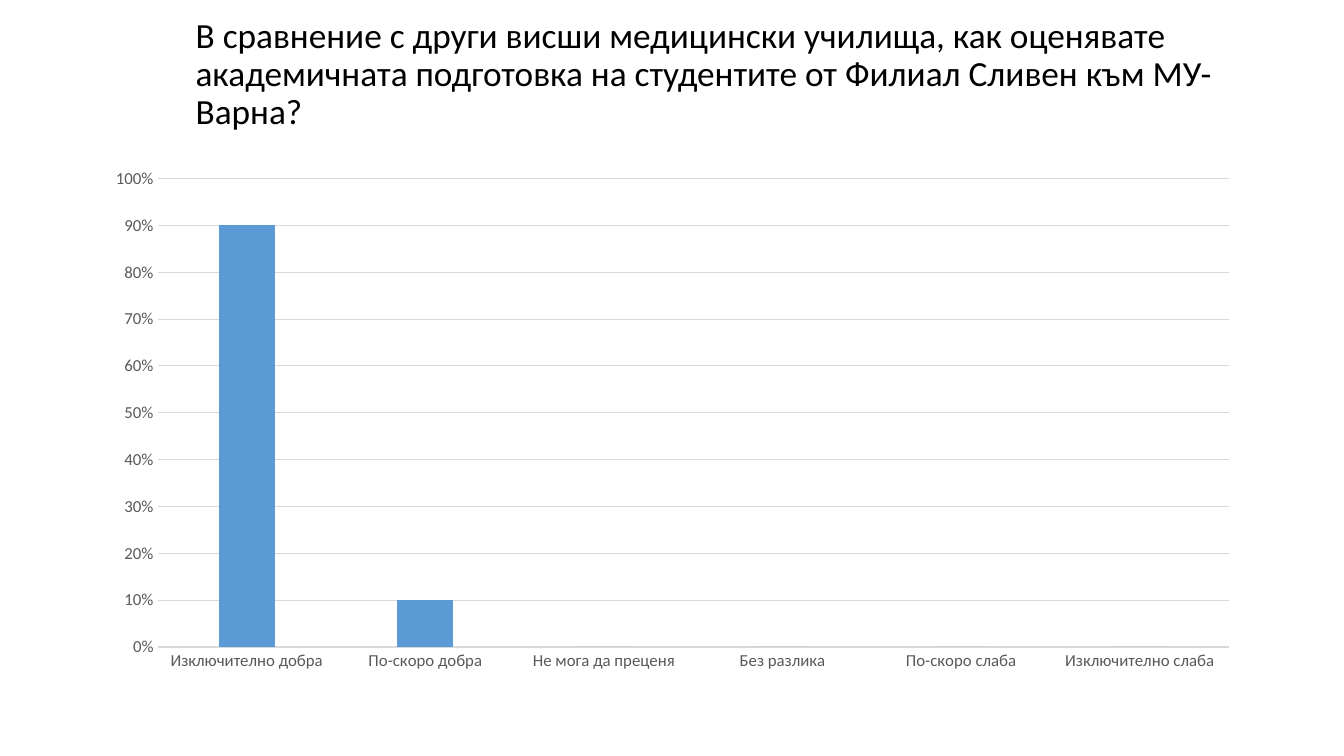
from dataclasses import dataclass

from pptx import Presentation
from pptx.chart.data import CategoryChartData
from pptx.dml.color import RGBColor
from pptx.enum.chart import XL_CHART_TYPE, XL_TICK_MARK
from pptx.enum.text import MSO_ANCHOR, MSO_AUTO_SIZE, PP_ALIGN
from pptx.util import Inches, Pt

COLUMNS = XL_CHART_TYPE.COLUMN_CLUSTERED
NO_TICK = XL_TICK_MARK.NONE
MIDDLE = MSO_ANCHOR.MIDDLE
NO_AUTOFIT = MSO_AUTO_SIZE.NONE
LEFT = PP_ALIGN.LEFT

TITLE = ("В сравнение с други висши медицински училища, как оценявате "
         "академичната подготовка на студентите от Филиал Сливен към МУ-Варна?")
SERIES_NAME = "Series 1"
RATINGS = [
    ("Изключително добра", 0.9),
    ("По-скоро добра", 0.1),
    ("Не мога да преценя", 0),
    ("Без разлика", 0),
    ("По-скоро слаба", 0),
    ("Изключително слаба", 0),
]
TITLE_BOX = (1.84, 0.15, 10.58, 1.19)
CHART_BOX = (0.92, 1.57, 11.5, 5.19)


@dataclass(frozen=True)
class Theme:
    font: str = "Calibri"
    title_size: float = 25.2
    axis_size: float = 12
    line_width: float = 0.75
    title: RGBColor = RGBColor(0x00, 0x00, 0x00)
    label: RGBColor = RGBColor(0x59, 0x59, 0x59)
    line: RGBColor = RGBColor(0xD9, 0xD9, 0xD9)
    bar: RGBColor = RGBColor(0x5B, 0x9B, 0xD5)


THEME = Theme()


def style_font(font, size, color):
    font.name = THEME.font
    font.size = Pt(size)
    font.color.rgb = color


def style_line(line):
    line.color.rgb = THEME.line
    line.width = Pt(THEME.line_width)


def add_title(s):
    title = s.shapes.title
    title.left, title.top, title.width, title.height = map(Inches, TITLE_BOX)
    tf = title.text_frame
    tf.text = TITLE
    tf.word_wrap = True
    tf.auto_size = NO_AUTOFIT
    tf.vertical_anchor = MIDDLE
    p = tf.paragraphs[0]
    p.alignment = LEFT
    p.line_spacing = 0.9
    style_font(p.runs[0].font, THEME.title_size, THEME.title)


def add_ratings_chart(s):
    data = CategoryChartData(number_format="0%")
    data.categories = [name for name, _ in RATINGS]
    data.add_series(SERIES_NAME, [share for _, share in RATINGS])
    chart = s.shapes.add_chart(COLUMNS, *map(Inches, CHART_BOX), data).chart
    chart.has_legend = False
    chart.has_title = False
    style_font(chart.font, THEME.axis_size, THEME.label)

    plot = chart.plots[0]
    plot.gap_width = 219
    plot.overlap = -27
    plot.vary_by_categories = False
    fill = plot.series[0].format.fill
    fill.solid()
    fill.fore_color.rgb = THEME.bar

    for axis in (chart.category_axis, chart.value_axis):
        axis.major_tick_mark = axis.minor_tick_mark = NO_TICK
        style_font(axis.tick_labels.font, THEME.axis_size, THEME.label)
    style_line(chart.category_axis.format.line)

    shares = chart.value_axis
    shares.minimum_scale, shares.maximum_scale, shares.major_unit = 0, 1, 0.1
    shares.tick_labels.number_format = "0%"
    shares.tick_labels.number_format_is_linked = False
    shares.format.line.fill.background()
    shares.has_major_gridlines = True
    style_line(shares.major_gridlines.format.line)


def main():
    prs = Presentation()
    prs.slide_width, prs.slide_height = Inches(13.33), Inches(7.5)
    s = prs.slides.add_slide(prs.slide_layouts.get_by_name("Title Only"))
    add_title(s)
    add_ratings_chart(s)
    prs.save("out.pptx")


if __name__ == "__main__":
    main()
